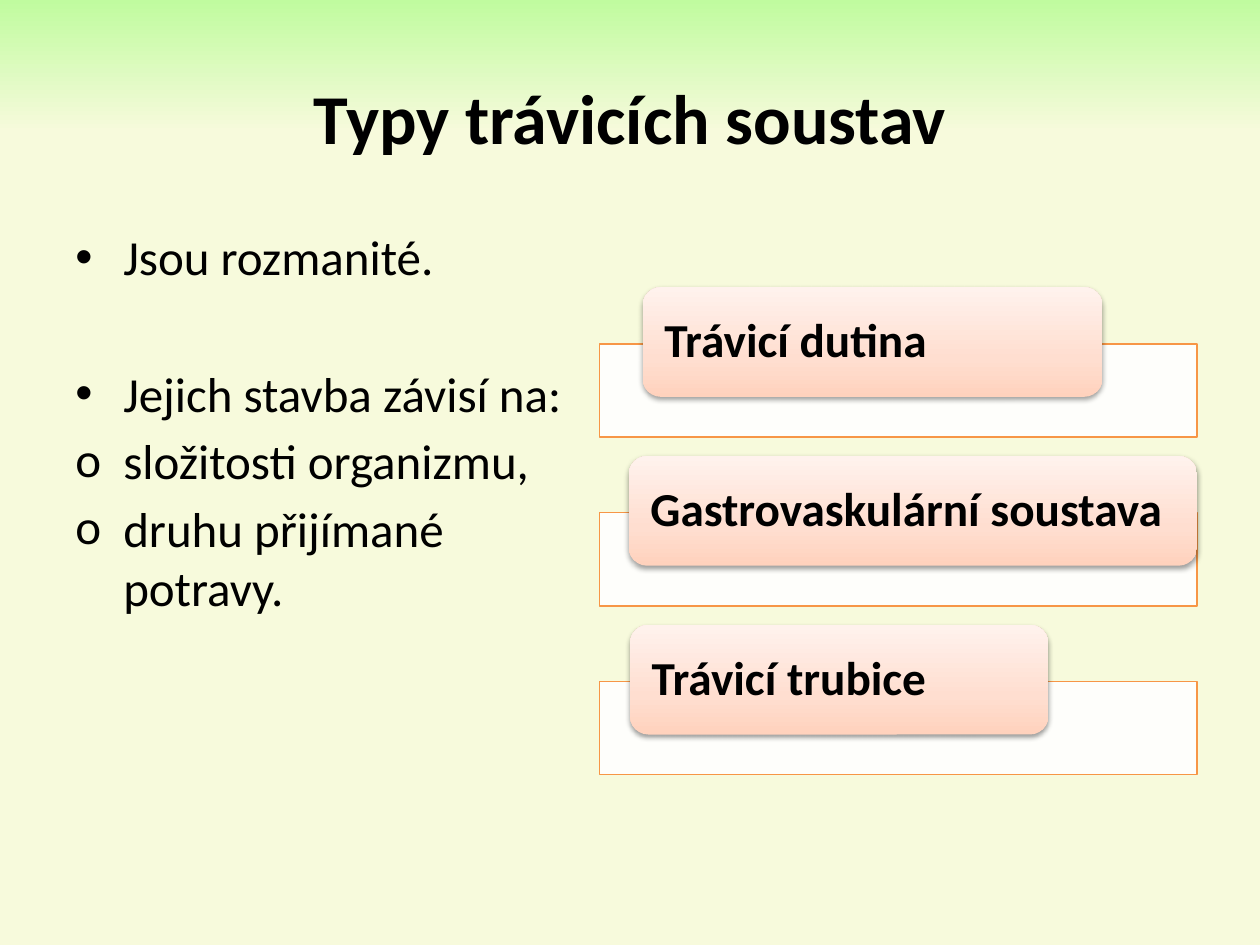
from typing import NamedTuple

from lxml import etree
from pptx import Presentation
from pptx import util as u
from pptx.dml.color import RGBColor
from pptx.enum import shapes, text
from pptx.oxml.ns import qn

BLACK = RGBColor(0, 0, 0)
WHITE = RGBColor(0xFF, 0xFF, 0xFF)
ORANGE = RGBColor(0xF7, 0x96, 0x46)
GREEN = RGBColor(0xC0, 0xFB, 0x9F)
CREAM = RGBColor(0xF7, 0xFA, 0xDC)
PEACH = RGBColor(0xFF, 0xD2, 0xBD)
BLUSH = RGBColor(0xFF, 0xDE, 0xD0)
PALE = RGBColor(0xFF, 0xF2, 0xED)

WIDTH, HEIGHT = u.Inches(10), u.Inches(7.5)
COL, ROW = WIDTH / 20, HEIGHT / 30
PITCH = 5.36  # rows from one card to the next


class Card(NamedTuple):
    label: str
    left: float
    width: float


class Item(NamedTuple):
    label: str
    mark: str
    before: float


CARDS = [
    Card("Trávicí dutina", 10.2, 7.3),
    Card("Gastrovaskulární soustava", 9.98, 9.02),
    Card("Trávicí trubice", 10, 6.64),
]
ITEMS = [
    Item("Jsou rozmanité.", "•", 5),
    Item("Jejich stavba závisí na:", "•", 44.5),
    Item("složitosti organizmu,", "o", 5),
    Item("druhu přijímané potravy.", "o", 5),
]


def grid(left: float, top: float, width: float, height: float) -> list[int]:
    """Turn columns and rows into slide lengths."""
    return [round(n * unit) for n, unit in
            zip((left, top, width, height), (COL, ROW, COL, ROW))]


def style(obj, values: dict) -> None:
    for name, value in values.items():
        setattr(obj, name, value)


def write(para, label: str, size: float, bold: bool = False) -> None:
    run = para.add_run()
    run.text = label
    style(run.font, {"name": "Calibri", "size": u.Pt(size), "bold": bold})
    run.font.color.rgb = BLACK


def add(parent, tag: str, **attrs: object):
    return etree.SubElement(parent, qn(tag), {k: str(v) for k, v in attrs.items()})


def blend(owner, fill, angle: int, stops: list) -> None:
    """Fill with a gradient; the angle runs counter-clockwise."""
    fill.gradient()
    fill.gradient_angle = angle
    stop_list = owner.element.find(".//" + qn("a:gsLst"))
    for old in list(stop_list):
        stop_list.remove(old)
    for share, color in stops:
        stop = add(stop_list, "a:gs", pos=share * 1000)
        add(stop, "a:srgbClr", val=color)


def draw_title(slide) -> None:
    title = slide.shapes.title
    style(title, dict(zip(("left", "top", "width", "height"), grid(1, 1.2, 18, 5))))
    title.text_frame.vertical_anchor = text.MSO_ANCHOR.MIDDLE
    para = title.text_frame.paragraphs[0]
    para.alignment = text.PP_ALIGN.CENTER
    write(para, "Typy trávicích soustav", 40, True)


def draw_list(slide, items: list[Item]) -> None:
    frame = slide.shapes.add_textbox(*grid(1, 7, 8.84, 19.8)).text_frame
    frame.word_wrap = True
    for i, item in enumerate(items):
        para = frame.add_paragraph() if i else frame.paragraphs[0]
        para.space_before = u.Pt(item.before)
        write(para, item.label, 28)
        props = para._p.get_or_add_pPr()
        style_indent = u.Inches(0.38)
        props.set("marL", str(style_indent))
        props.set("indent", str(-style_indent))
        add(props, "a:buFont", typeface="Arial" if item.mark == "•" else "Calibri")
        add(props, "a:buChar", char=item.mark)


def draw_bar(slide, shift: float) -> None:
    bar = slide.shapes.add_shape(
        shapes.MSO_SHAPE.RECTANGLE, *grid(9.52, 10.92 + shift, 9.48, 2.96))
    bar.shadow.inherit = False
    bar.fill.solid()
    bar.fill.fore_color.rgb = WHITE
    tint = bar.element.spPr.find(qn("a:solidFill") + "/" + qn("a:srgbClr"))
    add(tint, "a:alpha", val=90000)
    bar.line.color.rgb = ORANGE
    bar.line.width = u.Pt(0.75)


def draw_card(slide, card: Card, shift: float) -> None:
    box = slide.shapes.add_shape(
        shapes.MSO_SHAPE.ROUNDED_RECTANGLE,
        *grid(card.left, 9.12 + shift, card.width, 3.48))
    blend(box, box.fill, 90, [(0, PEACH), (35, BLUSH), (100, PALE)])
    box.line.fill.background()
    box.shadow.inherit = False
    shade = add(box.element.spPr.find(qn("a:effectLst")), "a:outerShdw",
                blurRad=u.Pt(3.1), dist=u.Pt(1.6), dir=5400000, rotWithShape=0)
    add(add(shade, "a:srgbClr", val=BLACK), "a:alpha", val=38000)
    frame = box.text_frame
    style(frame, {
        "word_wrap": True, "vertical_anchor": text.MSO_ANCHOR.MIDDLE,
        "margin_left": u.Inches(0.13), "margin_right": u.Inches(0.13),
        "margin_top": 0, "margin_bottom": 0,
    })
    para = frame.paragraphs[0]
    style(para, {"alignment": text.PP_ALIGN.LEFT, "line_spacing": 0.9})
    write(para, card.label, 27, True)


def main() -> None:
    deck = Presentation()
    style(deck, {"slide_width": WIDTH, "slide_height": HEIGHT})
    slide = deck.slides.add_slide(deck.slide_layouts[5])
    blend(slide, slide.background.fill, 270, [(0, GREEN), (14, CREAM), (100, CREAM)])
    draw_title(slide)
    draw_list(slide, ITEMS)
    for i, card in enumerate(CARDS):
        draw_bar(slide, i * PITCH)
        draw_card(slide, card, i * PITCH)
    deck.save("out.pptx")


if __name__ == "__main__":
    main()
